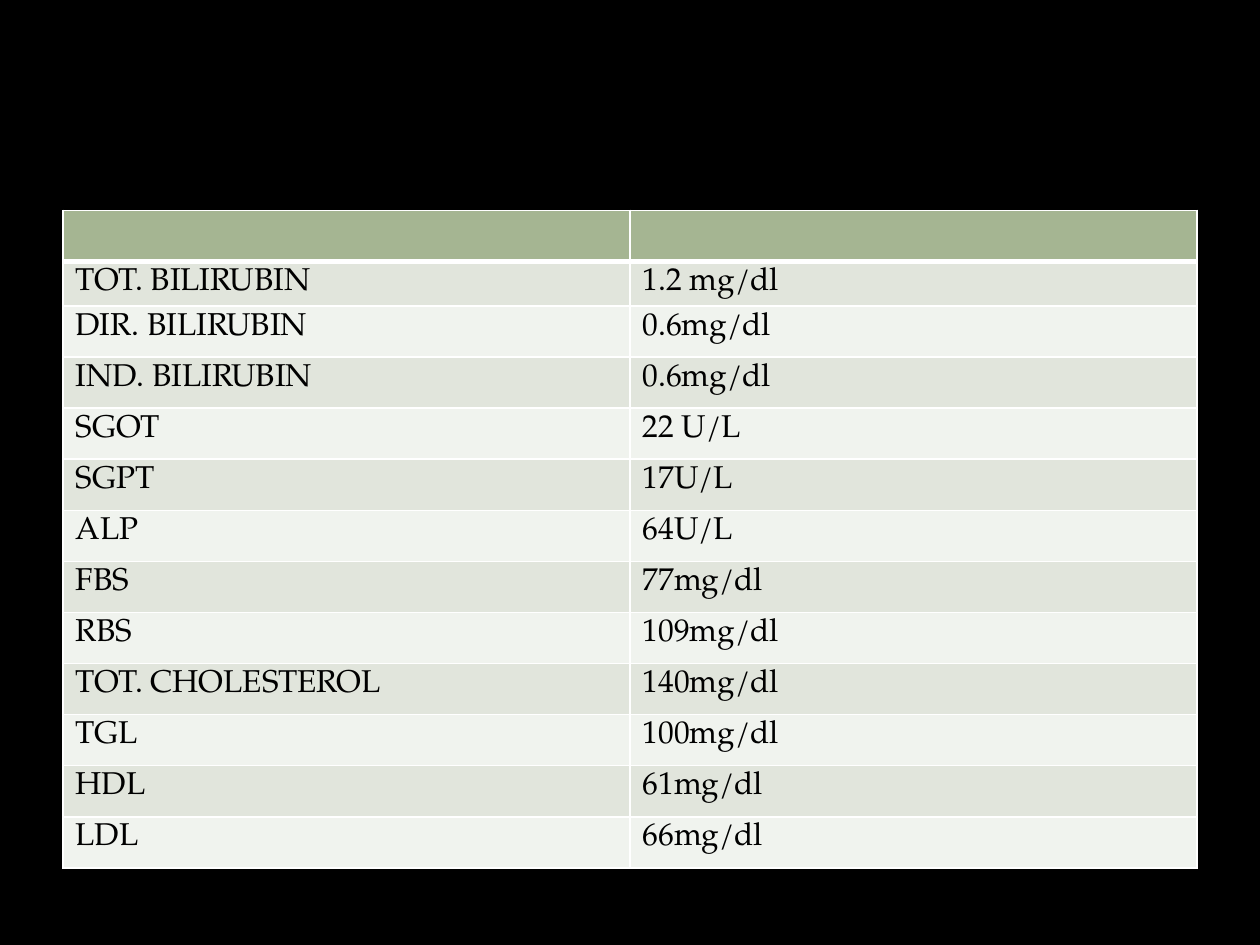
"""Build a slide with a table of blood test results."""
from lxml.etree import SubElement
from pptx import Presentation
from pptx.dml.color import RGBColor
from pptx.oxml.ns import qn
from pptx.util import Inches, Pt


def rgb(value):
    return RGBColor.from_string(value)


def border(cell, side, width, color):
    ln = SubElement(cell._tc.get_or_add_tcPr(), qn(f"a:ln{side}"), w=str(Pt(width)))
    fill = SubElement(ln, qn("a:solidFill"))
    SubElement(fill, qn("a:srgbClr"), val=color)


results = [
    ("", ""),
    ("TOT. BILIRUBIN", "1.2 mg/dl"),
    ("DIR. BILIRUBIN", "0.6mg/dl"),
    ("IND. BILIRUBIN", "0.6mg/dl"),
    ("SGOT", "22 U/L"),
    ("SGPT", "17U/L"),
    ("ALP", "64U/L"),
    ("FBS", "77mg/dl"),
    ("RBS", "109mg/dl"),
    ("TOT. CHOLESTEROL", "140mg/dl"),
    ("TGL", "100mg/dl"),
    ("HDL", "61mg/dl"),
    ("LDL", "66mg/dl"),
]
margins = {"margin_left": Inches(0.1), "margin_right": Inches(0.1),
           "margin_top": Inches(0.05), "margin_bottom": Inches(0.05)}
font_format = {"name": "TeX Gyre Pagella", "size": Pt(18), "bold": False}
header_fill, bands = "A5B592", ("F0F3EE", "E1E5DC")
row_height, short_height = Inches(4.87 / 12), Inches(0.35)

prs = Presentation()
prs.slide_width, prs.slide_height = Inches(10), Inches(7.5)
s = prs.slides.add_slide(prs.slide_layouts[6])
s.background.fill.solid()
s.background.fill.fore_color.rgb = rgb("000000")

table = s.shapes.add_table(len(results), 2, Inches(0.5), Inches(1.67),
                           Inches(9), Inches(5.22)).table
for i, texts in enumerate(results):
    table.rows[i].height = short_height if i == 1 else row_height
    for j, text in enumerate(texts):
        cell = table.cell(i, j)
        for name, value in margins.items():
            setattr(cell, name, value)
        widths = {"L": 1, "R": 1, "T": 3 if i == 1 else 1, "B": 3 if i == 0 else 1}
        for side, width in widths.items():
            border(cell, side, width, "FFFFFF")
        cell.fill.solid()
        cell.fill.fore_color.rgb = rgb(bands[i % 2] if i else header_fill)
        p = cell.text_frame.paragraphs[0]
        p.font.size = Pt(18)
        if text:
            r = p.add_run()
            r.text = text
            for name, value in font_format.items():
                setattr(r.font, name, value)
            r.font.color.rgb = rgb("000000")

prs.save("out.pptx")
